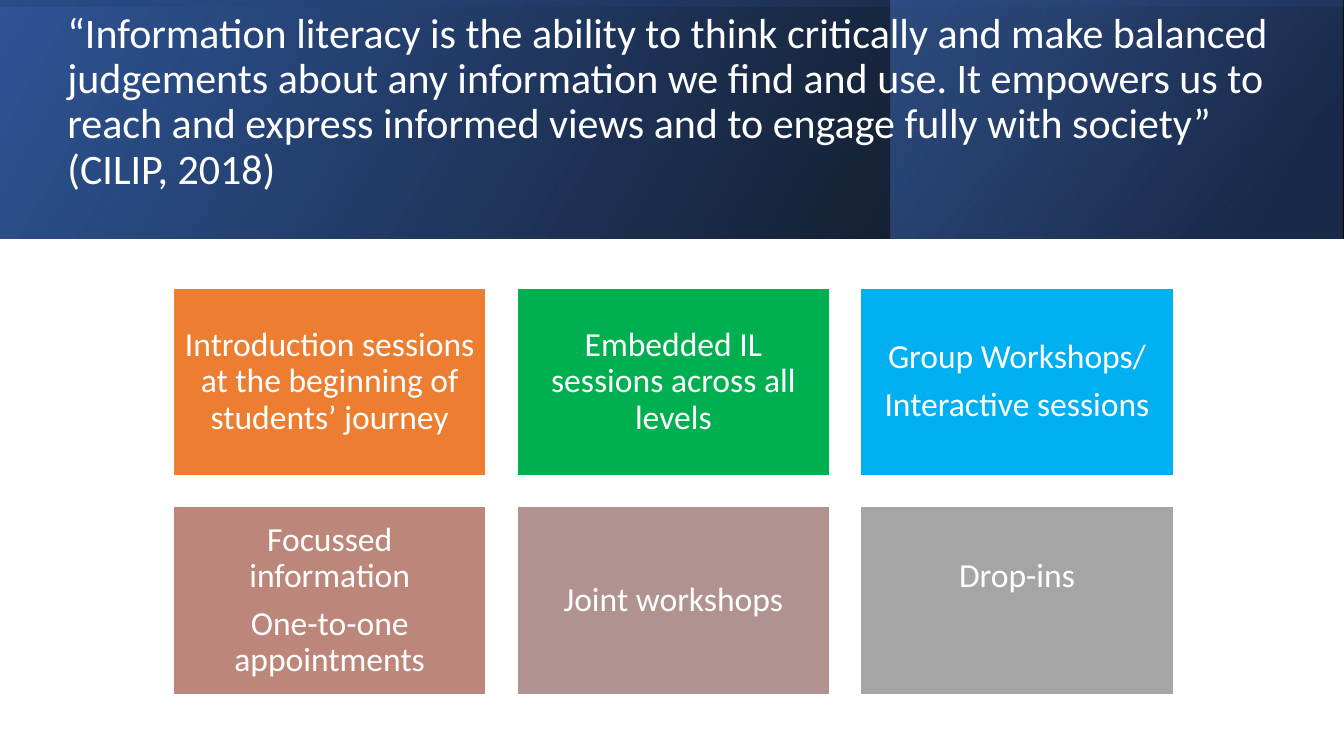
"""Build a slide with a quotation banner above a grid of six teaching formats."""
from lxml import etree
from pptx import Presentation
from pptx.dml.color import RGBColor
from pptx.enum.shapes import MSO_SHAPE
from pptx.enum.text import MSO_ANCHOR, PP_ALIGN
from pptx.oxml.ns import qn
from pptx.util import Cm, Pt

RECTANGLE = MSO_SHAPE.RECTANGLE
MIDDLE = MSO_ANCHOR.MIDDLE
LEFT, CENTER = PP_ALIGN.LEFT, PP_ALIGN.CENTER

FONT = "Calibri"
WHITE = RGBColor(0xFF, 0xFF, 0xFF)
BLACK = RGBColor(0x00, 0x00, 0x00)
BLUE = RGBColor(0x2F, 0x55, 0x97)
LIGHT_BLUE = RGBColor(0x44, 0x72, 0xC4)
NAVY = RGBColor(0x20, 0x38, 0x64)
ORANGE = RGBColor(0xED, 0x7D, 0x31)
GREEN = RGBColor(0x00, 0xB0, 0x50)
SKY = RGBColor(0x00, 0xB0, 0xF0)
CLAY = RGBColor(0xBD, 0x86, 0x7B)
MAUVE = RGBColor(0xB0, 0x93, 0x91)
GREY = RGBColor(0xA5, 0xA5, 0xA5)

PAGE_WIDTH, PAGE_HEIGHT = 33.87, 19.05
BANNER_HEIGHT = 6.02
PANEL_LEFT, PANEL_WIDTH = 22.45, 11.38
GRID_LEFT, GRID_TOP, COLUMNS = 4.37, 7.26, 3
CARD_WIDTH, CARD_HEIGHT, GAP = 7.88, 4.73, 0.78
INSET = 0.25

QUOTE = (
    "“Information literacy is the ability to think critically and make balanced "
    "judgements about any information we find and use. It empowers us to reach and "
    "express informed views and to engage fully with society” (CILIP, 2018)"
)
CARDS = [
    (ORANGE, ["Introduction sessions at the beginning of students’ journey"], INSET),
    (GREEN, ["Embedded IL sessions across all levels"], INSET),
    (SKY, ["Group Workshops/", "Interactive sessions"], INSET),
    (CLAY, ["Focussed information", "One-to-one appointments"], INSET),
    (MAUVE, ["Joint workshops"], INSET),
    (GREY, ["Drop-ins"], 1.47),
]


def add_rectangle(page, left, top, width, height):
    """Add a rectangle without a shadow, measured in centimetres."""
    shape = page.shapes.add_shape(RECTANGLE, Cm(left), Cm(top), Cm(width), Cm(height))
    shape.shadow.inherit = False
    return shape


def add_gradient(page, bounds, stops, angle, rotation=0):
    """Add a mirrored rectangle with a gradient of (position, colour, opacity) stops."""
    shape = add_rectangle(page, *bounds)
    shape.rotation = rotation
    shape._element.spPr.xfrm.set("flipH", "1")
    shape.line.fill.background()
    shape.fill.gradient()
    shape.fill.gradient_angle = angle
    for stop, (position, color, _) in zip(shape.fill.gradient_stops, stops):
        stop.position = position
        stop.color.rgb = color
    for color_node, (_, _, opacity) in zip(shape._element.spPr.iter(qn("a:srgbClr")), stops):
        etree.SubElement(color_node, qn("a:alpha")).set("val", str(opacity * 1000))


def write_text(frame, lines, size, alignment, space_after=0):
    """Write white, vertically centred paragraphs into a text frame."""
    frame.word_wrap = True
    frame.vertical_anchor = MIDDLE
    for index, line in enumerate(lines):
        para = frame.add_paragraph() if index else frame.paragraphs[0]
        para.text = line
        para.alignment = alignment
        para.line_spacing = 0.9
        para.space_after = Pt(space_after)
        para.font.name = FONT
        para.font.size = Pt(size)
        para.font.color.rgb = WHITE


def add_banner(page):
    """Layer the gradients of the banner and set the quotation on them."""
    add_gradient(page, (0, 0, PAGE_WIDTH, BANNER_HEIGHT),
                 [(0, BLACK, 96), (1, BLUE, 100)], 30)
    add_gradient(page, (PANEL_LEFT, 0, PANEL_WIDTH, BANNER_HEIGHT),
                 [(0.19, NAVY, 68), (1, LIGHT_BLUE, 48)], 40)
    offset = (PAGE_WIDTH - BANNER_HEIGHT) / 2
    add_gradient(page, (offset, -offset, BANNER_HEIGHT, PAGE_WIDTH),
                 [(0.23, BLUE, 16), (0.99, BLACK, 45)], 10, rotation=270)
    box = page.shapes.add_textbox(Cm(1.45), Cm(0.97), Cm(31.14), Cm(4.37))
    box.text_frame.margin_bottom = Cm(1.27)
    write_text(box.text_frame, [QUOTE], 30, LEFT)


def add_card(page, index, color, lines, bottom_inset):
    """Add one card at its place in the grid."""
    row, column = divmod(index, COLUMNS)
    card = add_rectangle(page, GRID_LEFT + column * (CARD_WIDTH + GAP),
                         GRID_TOP + row * (CARD_HEIGHT + GAP), CARD_WIDTH, CARD_HEIGHT)
    card.fill.solid()
    card.fill.fore_color.rgb = color
    card.line.color.rgb = WHITE
    card.line.width = Pt(1)
    frame = card.text_frame
    frame.margin_left = frame.margin_right = frame.margin_top = Cm(INSET)
    frame.margin_bottom = Cm(bottom_inset)
    write_text(frame, lines, 24, CENTER, space_after=8.4)


def main():
    """Create the deck and save it."""
    deck = Presentation()
    deck.slide_width, deck.slide_height = Cm(PAGE_WIDTH), Cm(PAGE_HEIGHT)
    page = deck.slides.add_slide(deck.slide_layouts[6])
    add_banner(page)
    for index, card in enumerate(CARDS):
        add_card(page, index, *card)
    deck.save("out.pptx")


if __name__ == "__main__":
    main()
